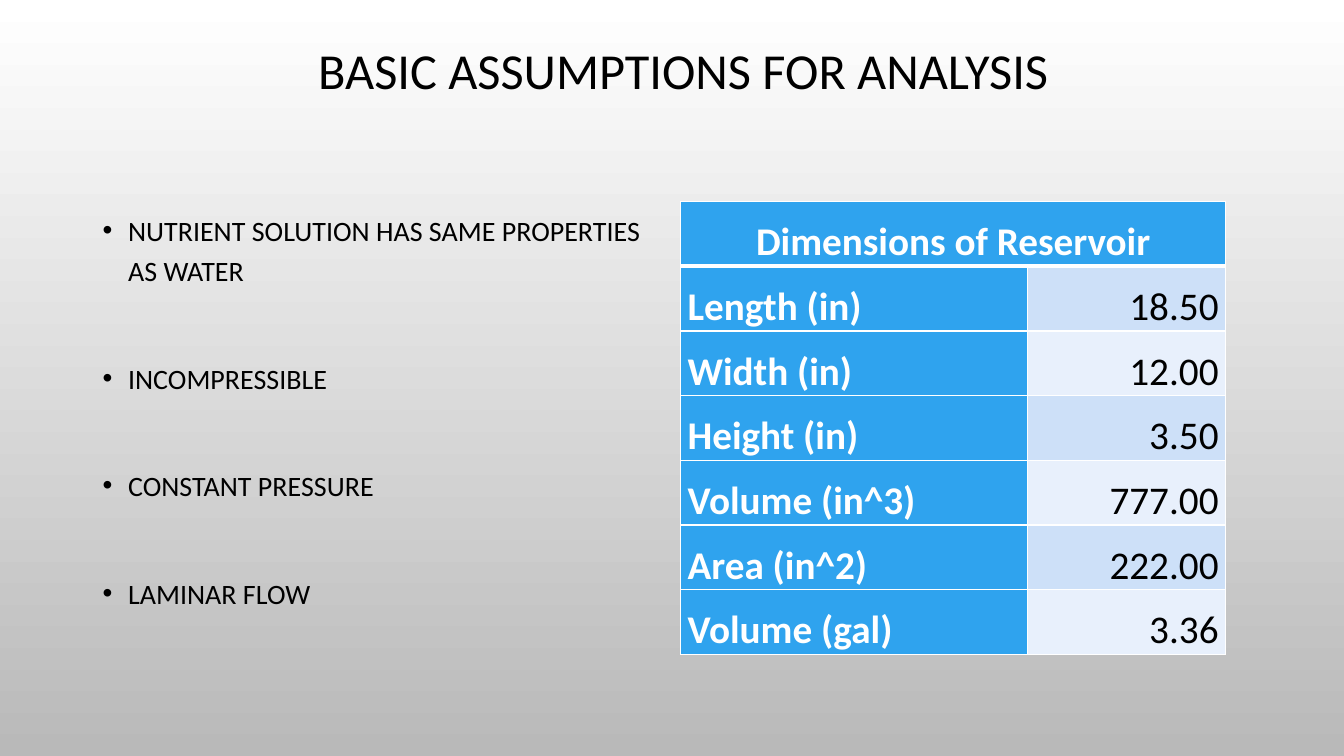
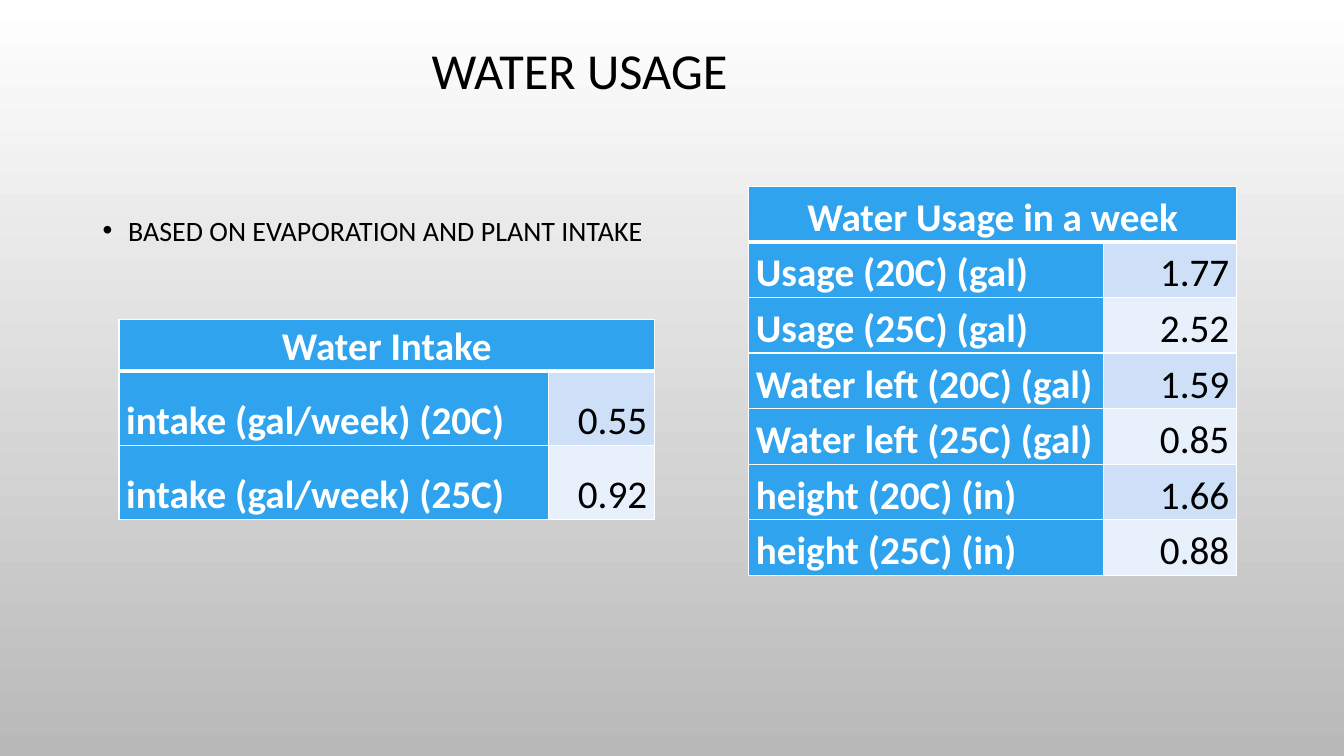
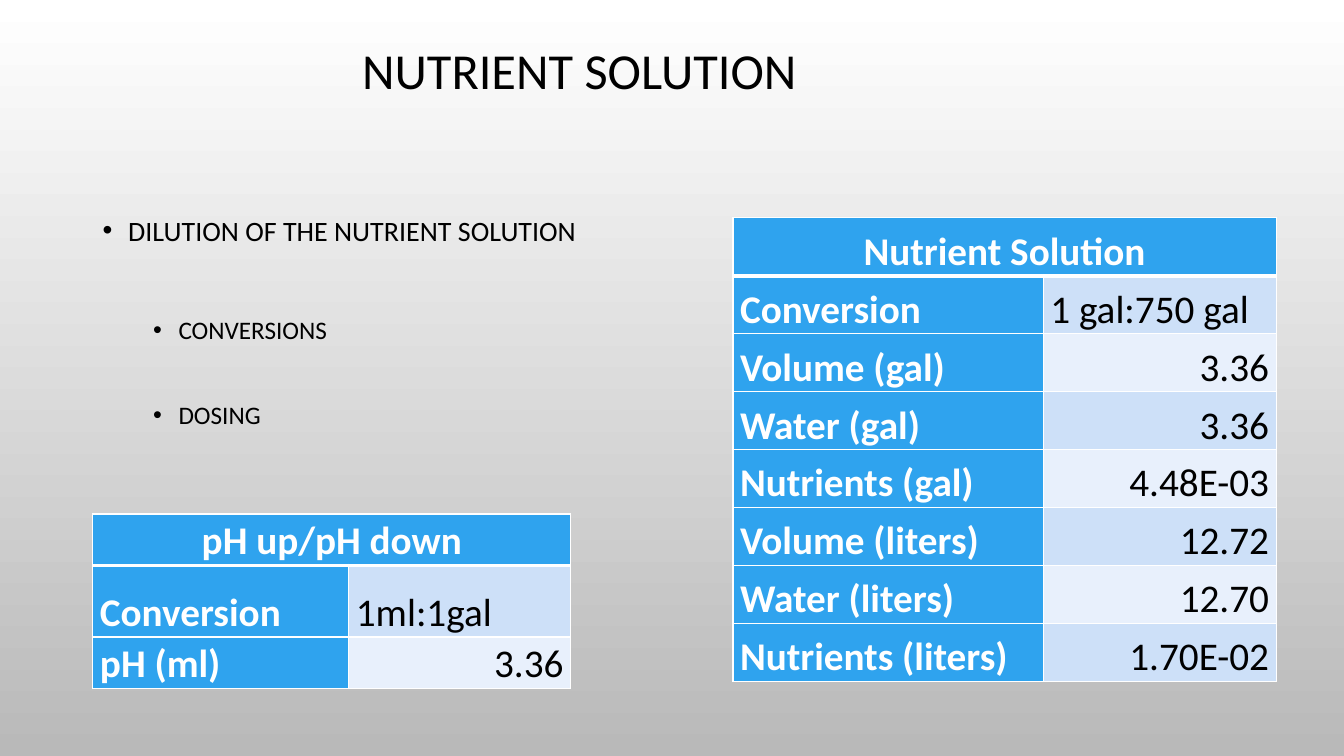
from lxml import etree
from pptx import Presentation
from pptx.dml.color import RGBColor
from pptx.enum.text import MSO_ANCHOR, PP_ALIGN
from pptx.oxml.ns import qn
from pptx.util import Cm, Pt

LEFT, CENTER, RIGHT = PP_ALIGN.LEFT, PP_ALIGN.CENTER, PP_ALIGN.RIGHT
TOP, MIDDLE, BOTTOM = MSO_ANCHOR.TOP, MSO_ANCHOR.MIDDLE, MSO_ANCHOR.BOTTOM

COLORS = {
    "black": "000000",
    "white": "FFFFFF",
    "gray": "B9B9B9",
    "blue": "2FA3EE",
    "band_dark": "CDE0F8",
    "band_light": "E8F0FC",
}
FONT = "Calibri"
TITLE = {"size": Pt(36), "bold": False}
BULLETS = [{"size": Pt(20), "bold": False}, {"size": Pt(18), "bold": False}]
HEADING = {"size": Pt(28), "bold": True}
VALUE = {"size": Pt(28), "bold": False}


def rgb(name):
    return RGBColor.from_string(COLORS[name])


def set_attrs(obj, values):
    for name, value in values.items():
        setattr(obj, name, value)


def set_background(prs):
    fill = prs.slide_master.background.fill
    fill.gradient()
    fill.gradient_angle = 270
    for stop, position, color in zip(fill.gradient_stops, (0, 1), ("white", "gray")):
        stop.position = position
        stop.color.rgb = rgb(color)


def write(p, text, style, color="black"):
    r = p.add_run()
    r.text = text
    set_attrs(r.font, {"name": FONT, **style})
    r.font.color.rgb = rgb(color)


def add_box(s, left, top, width, height, anchor):
    sp = s.shapes.add_textbox(Cm(left), Cm(top), Cm(width), Cm(height))
    tf = sp.text_frame
    set_attrs(tf, {"word_wrap": True, "vertical_anchor": anchor})
    return tf


def add_title(s, text, left=0):
    p = add_box(s, left, 0, 29.21, 3.68, MIDDLE).paragraphs[0]
    set_attrs(p, {"alignment": CENTER, "line_spacing": 0.9})
    write(p, text, TITLE)


def set_bullet(p, level):
    pPr = p._p.get_or_add_pPr()
    pPr.set("marL", str(Cm(0.64 + 1.27 * level)))
    pPr.set("indent", str(-Cm(0.64)))
    color = etree.SubElement(pPr, qn("a:buClr"))
    etree.SubElement(color, qn("a:srgbClr"), val=COLORS["black"])
    etree.SubElement(pPr, qn("a:buFont"), typeface="Arial")
    etree.SubElement(pPr, qn("a:buChar"), char="•")


def add_bullets(s, width, height, items):
    tf = add_box(s, 2.34, 5.08, width, height, TOP)
    for i, (text, level, gap) in enumerate(items):
        p = tf.add_paragraph() if i else tf.paragraphs[0]
        set_bullet(p, level)
        set_attrs(p, {"level": level, "line_spacing": 1.2, "space_before": Pt(gap)})
        write(p, text, BULLETS[level])


def set_borders(cell, row):
    tcPr = cell._tc.get_or_add_tcPr()
    widths = {"L": 1, "R": 1, "T": 3 if row == 1 else 1, "B": 3 if row == 0 else 1}
    for side, width in widths.items():
        line = etree.SubElement(tcPr, qn("a:ln" + side), w=str(Pt(width)))
        fill = etree.SubElement(line, qn("a:solidFill"))
        etree.SubElement(fill, qn("a:srgbClr"), val=COLORS["white"])


def fill_cell(cell, row, text, fill, style, color, align):
    set_attrs(cell, {
        "margin_left": Cm(0.18), "margin_right": Cm(0.18),
        "margin_top": 0, "margin_bottom": 0, "vertical_anchor": BOTTOM,
    })
    set_borders(cell, row)
    cell.fill.solid()
    cell.fill.fore_color.rgb = rgb(fill)
    p = cell.text_frame.paragraphs[0]
    set_attrs(p, {"alignment": align, "line_spacing": 1.07})
    if text:
        write(p, text, style, color)


def add_data_table(s, left, top, widths, heights, heading, rows):
    frame = s.shapes.add_table(len(heights), 2, Cm(left), Cm(top),
                               Cm(sum(widths)), Cm(sum(heights)))
    table = frame.table
    set_attrs(table, {"first_col": True, "horz_banding": False})
    for column, width in zip(table.columns, widths):
        column.width = Cm(width)
    for row, height in zip(table.rows, heights):
        row.height = Cm(height)
    for col, text in enumerate((heading, "")):
        fill_cell(table.cell(0, col), 0, text, "blue", HEADING, "white", CENTER)
    table.cell(0, 0).merge(table.cell(0, 1))
    for i, (label, value) in enumerate(rows, 1):
        band = "band_dark" if i % 2 else "band_light"
        align = LEFT if ":" in value else RIGHT
        fill_cell(table.cell(i, 0), i, label, "blue", HEADING, "white", LEFT)
        fill_cell(table.cell(i, 1), i, value, band, VALUE, "black", align)


def add_assumptions(s):
    add_title(s, "BASIC ASSUMPTIONS FOR ANALYSIS", 2.62)
    add_bullets(s, 14.48, 12.09, [
        ("NUTRIENT SOLUTION HAS SAME PROPERTIES AS WATER", 0, 0),
        ("INCOMPRESSIBLE", 0, 48),
        ("CONSTANT PRESSURE", 0, 48),
        ("LAMINAR FLOW", 0, 48),
    ])
    add_data_table(s, 17.15, 5.08, (8.74, 5), [1.63] * 7, "Dimensions of Reservoir", [
        ("Length (in)", "18.50"),
        ("Width (in)", "12.00"),
        ("Height (in)", "3.50"),
        ("Volume (in^3)", "777.00"),
        ("Area (in^2)", "222.00"),
        ("Volume (gal)", "3.36"),
    ])


def add_water_usage(s):
    add_title(s, "WATER USAGE")
    add_bullets(s, 29.21, 1.9, [("BASED ON EVAPORATION AND PLANT INTAKE", 0, 0)])
    add_data_table(s, 18.87, 4.7, (8.93, 3.36), [1.4] * 7, "Water Usage in a week", [
        ("Usage (20C) (gal)", "1.77"),
        ("Usage (25C) (gal)", "2.52"),
        ("Water left (20C) (gal)", "1.59"),
        ("Water left (25C) (gal)", "0.85"),
        ("height (20C) (in)", "1.66"),
        ("height (25C) (in)", "0.88"),
    ])
    add_data_table(s, 3, 8.05, (10.82, 2.67), (1.3, 1.87, 1.87), "Water Intake", [
        ("intake (gal/week) (20C)", "0.55"),
        ("intake (gal/week) (25C)", "0.92"),
    ])


def add_nutrient_solution(s):
    add_title(s, "NUTRIENT SOLUTION")
    add_bullets(s, 13.79, 12.09, [
        ("DILUTION OF THE NUTRIENT SOLUTION", 0, 0),
        ("CONVERSIONS", 1, 44),
        ("DOSING", 1, 35),
    ])
    add_data_table(s, 18.47, 5.49, (7.82, 5.87), [1.46] * 8, "Nutrient Solution", [
        ("Conversion", "1 gal:750 gal"),
        ("Volume (gal)", "3.36"),
        ("Water (gal)", "3.36"),
        ("Nutrients (gal)", "4.48E-03"),
        ("Volume (liters)", "12.72"),
        ("Water (liters)", "12.70"),
        ("Nutrients (liters)", "1.70E-02"),
    ])
    add_data_table(s, 2.34, 12.95, (6.45, 5.59), (1.3, 1.8, 1.3), "pH up/pH down", [
        ("Conversion", "1ml:1gal"),
        ("pH (ml)", "3.36"),
    ])


def main():
    prs = Presentation()
    set_attrs(prs, {"slide_width": Cm(33.87), "slide_height": Cm(19.05)})
    set_background(prs)
    for build in (add_assumptions, add_water_usage, add_nutrient_solution):
        build(prs.slides.add_slide(prs.slide_layouts[6]))
    prs.save("out.pptx")


if __name__ == "__main__":
    main()
